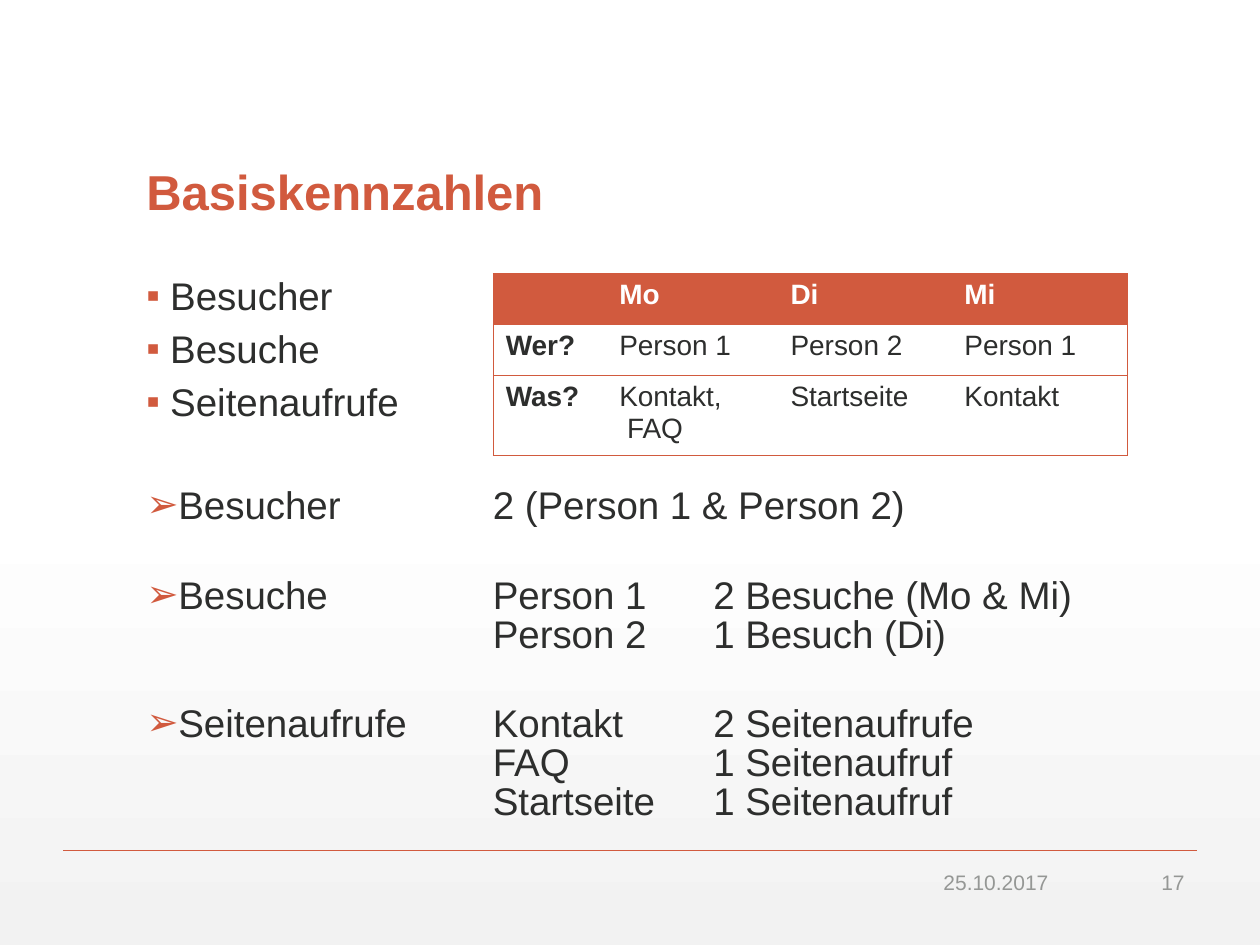
import dataclasses

import lxml.etree
import pptx
import pptx.dml.color
import pptx.enum.dml
import pptx.enum.shapes
import pptx.enum.text
import pptx.oxml.ns
import pptx.util

ANCHOR = pptx.enum.text.MSO_ANCHOR
ALIGN = pptx.enum.text.PP_ALIGN
COLUMNS, ROWS = 40, 30
CELL = pptx.util.Inches(0.25)
NO_TABLE_STYLE = "{2D5ABB26-0587-4C30-8999-92F81FD0307C}"


@dataclasses.dataclass(frozen=True)
class Theme:
    font: str = "Arial"
    accent: str = "D15A3E"
    ink: str = "2D2E2D"
    muted: str = "959795"
    white: str = "FFFFFF"
    shade: str = "F2F2F2"
    title: int = 28
    body: int = 22
    table: int = 16
    footer: int = 12


THEME = Theme()


def grid(*cells):
    return [round(cell * CELL) for cell in cells]


def rgb(code):
    return pptx.dml.color.RGBColor.from_string(code)


def assign(target, values):
    for name, value in values.items():
        setattr(target, name, value)


def add_xml(parent, tag, **attributes):
    return lxml.etree.SubElement(
        parent, pptx.oxml.ns.qn(tag), {key: str(value) for key, value in attributes.items()}
    )


def write(paragraph, wording, size, color, bold=False, **layout):
    paragraph.text = wording
    assign(paragraph, layout)
    for run in paragraph.runs:
        assign(run.font, {"name": THEME.font, "size": pptx.util.Pt(size), "bold": bold})
        run.font.color.rgb = rgb(color)


def add_frame(slide, box, anchor):
    frame = slide.shapes.add_textbox(*grid(*box)).text_frame
    assign(frame, {"word_wrap": True, "vertical_anchor": anchor})
    return frame


def add_bullet(paragraph, mark, tabs=()):
    properties = paragraph._p.get_or_add_pPr()
    indent = pptx.util.Inches(0.19)
    properties.set("marL", str(indent))
    properties.set("indent", str(-indent))
    add_xml(add_xml(properties, "a:buClr"), "a:srgbClr", val=THEME.accent)
    add_xml(properties, "a:buFont", typeface=THEME.font)
    add_xml(properties, "a:buChar", char=mark)
    if tabs:
        stops = add_xml(properties, "a:tabLst")
        for position in grid(*tabs):
            add_xml(stops, "a:tab", pos=position, algn="l")


def paint_background(slide):
    fill = slide.background.fill
    fill.gradient()
    fill.gradient_angle = 270
    stop_list = slide._element.xpath(".//a:gsLst")[0]
    for stop in list(stop_list):
        stop_list.remove(stop)
    for share, color in ((0, THEME.white), (53, THEME.white), (100, THEME.shade)):
        stop = add_xml(stop_list, "a:gs", pos=share * 1000)
        add_xml(stop, "a:srgbClr", val=color)


def add_title(slide, box):
    heading = add_frame(slide, box, ANCHOR.BOTTOM).paragraphs[0]
    write(heading, "Basiskennzahlen", THEME.title, THEME.accent, True, line_spacing=0.9)


def add_metrics(slide, box):
    value_tabs = (11, 18)
    square, arrow = "▪", "➢"
    metrics = [
        (square, 8, "Besucher"),
        (square, 8, "Besuche"),
        (square, 8, "Seitenaufrufe"),
        (arrow, 37, "Besucher\t2 (Person 1 & Person 2)"),
        (arrow, 29, "Besuche\tPerson 1\t2 Besuche (Mo & Mi)\n\tPerson 2\t1 Besuch (Di)"),
        (arrow, 29, "Seitenaufrufe\tKontakt\t2 Seitenaufrufe\n"
                    "\tFAQ\t1 Seitenaufruf\n\tStartseite\t1 Seitenaufruf"),
    ]
    frame = add_frame(slide, box, ANCHOR.TOP)
    for index, (mark, gap, wording) in enumerate(metrics):
        paragraph = frame.add_paragraph() if index else frame.paragraphs[0]
        write(paragraph, wording, THEME.body, THEME.ink,
              line_spacing=0.84, space_before=pptx.util.Pt(gap))
        add_bullet(paragraph, mark, value_tabs if mark == arrow else ())


def add_border(cell, side):
    edge = add_xml(cell._tc.get_or_add_tcPr(), f"a:ln{side}", w=pptx.util.Pt(0.5))
    add_xml(add_xml(edge, "a:solidFill"), "a:srgbClr", val=THEME.accent)


def add_visits_table(slide, box):
    visits = [
        ("", "Mo", "Di", "Mi"),
        ("Wer?", "Person 1", "Person 2", "Person 1"),
        ("Was?", "Kontakt,\n FAQ", "Startseite", "Kontakt"),
    ]
    table = slide.shapes.add_table(len(visits), len(visits[0]), *grid(*box)).table
    table._tbl.tblPr.find(pptx.oxml.ns.qn("a:tableStyleId")).text = NO_TABLE_STYLE
    assign(table, {"first_row": False, "horz_banding": False})
    for column, width in zip(table.columns, grid(3.6, 5.44, 5.52, 5.56)):
        column.width = width
    for row, height in zip(table.rows, grid(1.62, 1.62, 2.38)):
        row.height = height
    last_column = len(visits[0]) - 1
    for row_index, row in enumerate(visits):
        header = row_index == 0
        for column_index, wording in enumerate(row):
            cell = table.cell(row_index, column_index)
            write(cell.text_frame.paragraphs[0], wording, THEME.table,
                  THEME.white if header else THEME.ink, header or column_index == 0)
            sides = {"L": column_index == 0, "R": column_index == last_column,
                     "T": True, "B": True}
            for side, drawn in sides.items():
                if drawn:
                    add_border(cell, side)
            if header:
                cell.fill.solid()
                cell.fill.fore_color.rgb = rgb(THEME.accent)
            else:
                cell.fill.background()


def add_footer(slide, box):
    left, top, width, height = box
    rule = slide.shapes.add_connector(
        pptx.enum.shapes.MSO_CONNECTOR.STRAIGHT, *grid(left, top, left + width, top)
    )
    rule.line.color.rgb = rgb(THEME.accent)
    rule.line.width = pptx.util.Pt(1)
    add_xml(rule._element.spPr, "a:effectLst")
    for wording, offset, span in (("25.10.2017", 26, 5.68), ("17", 33, 3)):
        frame = add_frame(slide, (left + offset, top + 0.52, span, height), ANCHOR.MIDDLE)
        write(frame.paragraphs[0], wording, THEME.footer, THEME.muted, alignment=ALIGN.RIGHT)


def main():
    deck = pptx.Presentation()
    assign(deck, {"slide_width": COLUMNS * CELL, "slide_height": ROWS * CELL})
    slide = deck.slides.add_slide(deck.slide_layouts[6])
    paint_background(slide)
    add_footer(slide, (2, 27, 36, 0.96))
    add_title(slide, (4.25, 2.2, 31.5, 5))
    add_metrics(slide, (4.25, 8.68, 31.5, 18.32))
    add_visits_table(slide, (15.66, 8.68, 20.12, 5.62))
    deck.save("out.pptx")


if __name__ == "__main__":
    main()
